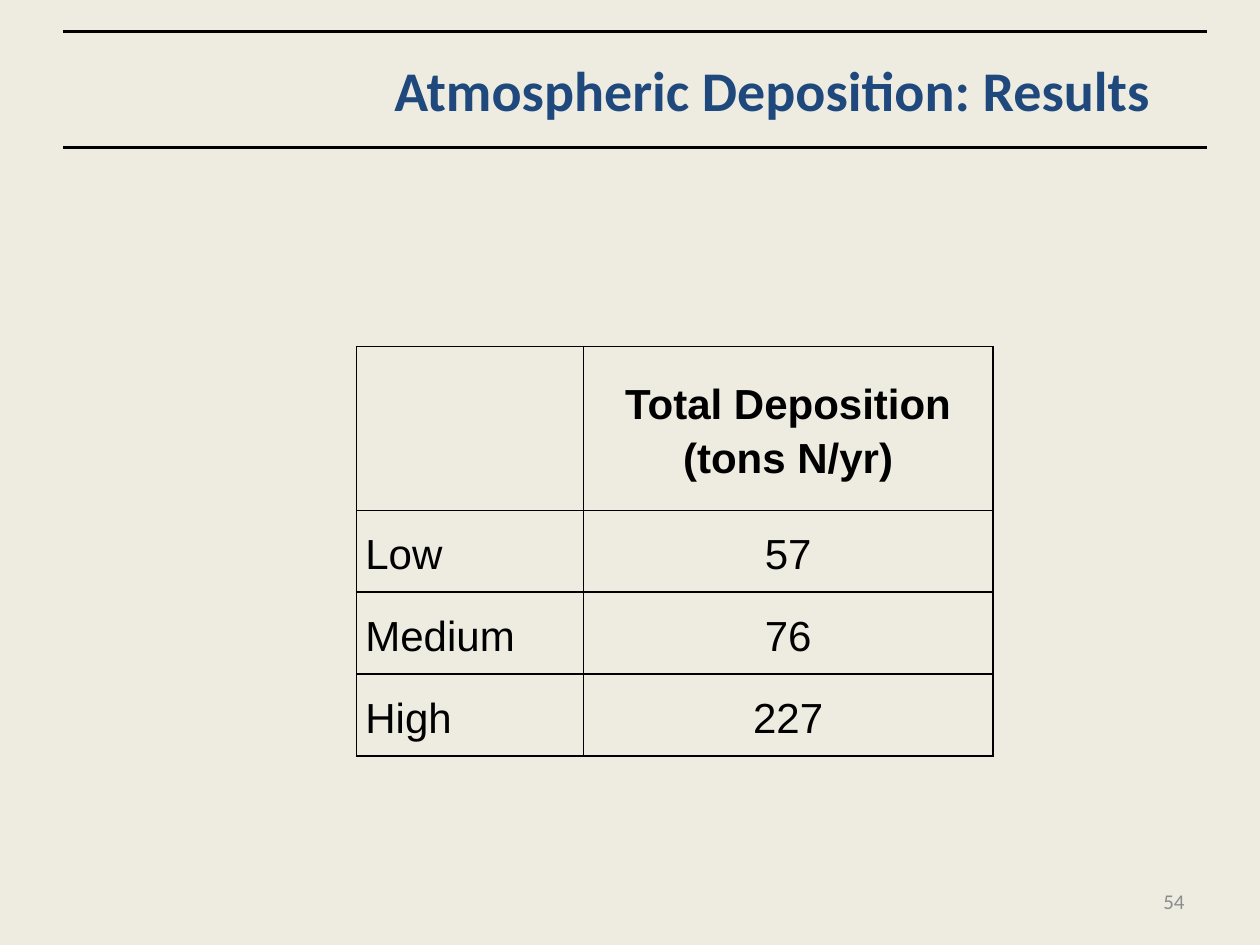
import pptx
import pptx.util
import pptx.dml.color
import pptx.enum.shapes
import pptx.enum.text
import pptx.oxml
import pptx.oxml.ns
import lxml.etree

Inches = pptx.util.Inches
Pt = pptx.util.Pt
RGBColor = pptx.dml.color.RGBColor
PP_ALIGN = pptx.enum.text.PP_ALIGN
MIDDLE = pptx.enum.text.MSO_ANCHOR.MIDDLE
qn = pptx.oxml.ns.qn

CREAM = RGBColor(0xEE, 0xEC, 0xE1)
NAVY = RGBColor(0x1F, 0x49, 0x7D)
GRAY = RGBColor(0x8C, 0x8C, 0x8C)
BLACK = RGBColor(0, 0, 0)


def style(paragraph, font_name, size, color, align, bold=False):
    paragraph.alignment = align
    paragraph.font.name = font_name
    paragraph.font.size = Pt(size)
    paragraph.font.bold = bold
    paragraph.font.color.rgb = color


def add_label(text, left, top, width, height, size, color, align, bold=False):
    label = slide.shapes.add_textbox(
        Inches(left), Inches(top), Inches(width), Inches(height))
    frame = label.text_frame
    frame.word_wrap = True
    frame.vertical_anchor = MIDDLE
    frame.text = text
    style(frame.paragraphs[0], "Calibri", size, color, align, bold)


deck = pptx.Presentation()
deck.slide_width = Inches(10)
deck.slide_height = Inches(7.5)
slide = deck.slides.add_slide(deck.slide_layouts[6])
slide.background.fill.solid()
slide.background.fill.fore_color.rgb = CREAM

# Rules above and below the title
for y in (1.17, 0.25):
    rule = slide.shapes.add_connector(
        pptx.enum.shapes.MSO_CONNECTOR.STRAIGHT,
        Inches(0.5), Inches(y), Inches(9.58), Inches(y))
    rule.line.color.rgb = BLACK
    rule.line.width = Pt(2)
    lxml.etree.SubElement(rule._element.spPr, qn("a:effectLst"))

# Title and page number
add_label("Atmospheric Deposition: Results", 2.67, 0.25, 6.92, 0.92,
          32, NAVY, PP_ALIGN.CENTER, bold=True)
add_label("54", 7.17, 6.95, 2.33, 0.4, 12, GRAY, PP_ALIGN.RIGHT)

# Deposition table
rows = [
    ("", "Total Deposition\n(tons N/yr)"),
    ("Low", "57"),
    ("Medium", "76"),
    ("High", "227"),
]
deposition = slide.shapes.add_table(
    len(rows), 2, Inches(2.83), Inches(2.75), Inches(5.05), Inches(3.25)).table
deposition.first_row = False
deposition.horz_banding = False
for column, width in zip(deposition.columns, (1.8, 3.25)):
    column.width = Inches(width)
for row, height in zip(deposition.rows, (1.3, 0.65, 0.65, 0.65)):
    row.height = Inches(height)

for r, values in enumerate(rows):
    for c, value in enumerate(values):
        cell = deposition.cell(r, c)
        cell.text = value
        cell.vertical_anchor = MIDDLE
        cell.margin_left = cell.margin_right = Inches(0.07)
        cell.margin_top = cell.margin_bottom = 0
        for paragraph in cell.text_frame.paragraphs:
            paragraph.line_spacing = 1.15
            style(paragraph, "Arial", 24, BLACK,
                  PP_ALIGN.CENTER if c else PP_ALIGN.LEFT, bold=r == 0)

        # Borders come before the fill in the cell properties
        properties = cell._tc.get_or_add_tcPr()
        for side in ("a:lnL", "a:lnR", "a:lnT", "a:lnB"):
            border = lxml.etree.SubElement(properties, qn(side), w=str(Pt(1)))
            solid = lxml.etree.SubElement(border, qn("a:solidFill"))
            lxml.etree.SubElement(solid, qn("a:srgbClr"), val=str(BLACK))
        cell.fill.background()

deck.save("out.pptx")
